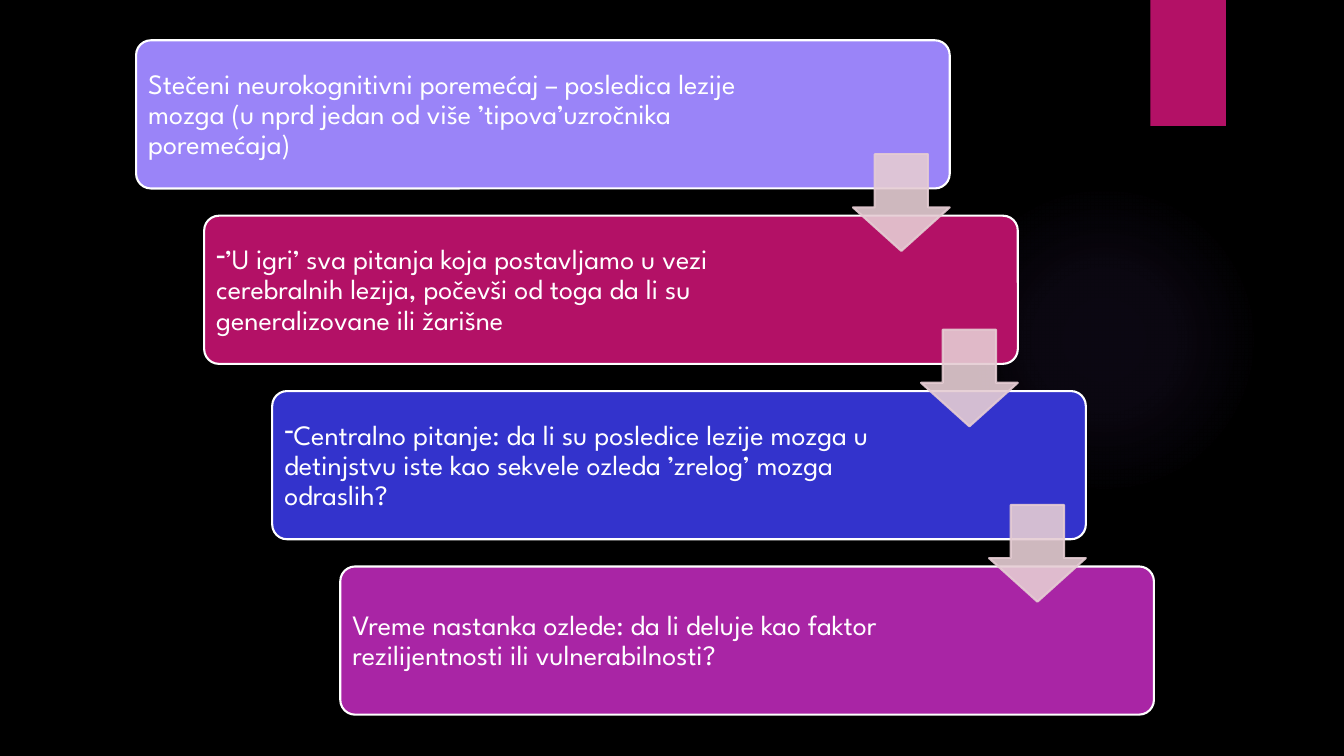
import pptx
import pptx.dml.color
import pptx.enum.shapes
import pptx.enum.text
import pptx.oxml
import pptx.oxml.ns
import pptx.util
from pptx.util import Inches

SHAPES = pptx.enum.shapes.MSO_SHAPE
COLORS = {
    "black": "000000", "white": "FFFFFF", "glow": "9B6BF2", "lilac": "9A84F8",
    "magenta": "B31166", "blue": "3333CC", "purple": "A925A5", "arrow": "E5CCD3",
}
TEXT_FORMAT = {"name": "League Spartan", "size": pptx.util.Pt(20)}
FRAME_FORMAT = {
    "word_wrap": True,
    "vertical_anchor": pptx.enum.text.MSO_ANCHOR.MIDDLE,
    **{f"margin_{side}": Inches(0.08) for side in ("left", "right", "top", "bottom")},
}
# Card colour, whether the text has a dash bullet, and the text
STEPS = [
    ("lilac", False, "Stečeni neurokognitivni poremećaj – posledica lezije mozga "
     "(u nprd jedan od više ’tipova’uzročnika poremećaja)"),
    ("magenta", True, "’U igri’ sva pitanja koja postavljamo u vezi cerebralnih lezija, "
     "počevši od toga da li su generalizovane ili žarišne"),
    ("blue", True, "Centralno pitanje: da li su posledice lezije mozga u detinjstvu "
     "iste kao sekvele ozleda ’zrelog’ mozga odraslih?"),
    ("purple", False, "Vreme nastanka ozlede: da li deluje kao faktor "
     "rezilijentnosti ili vulnerabilnosti?"),
]
CARD_WIDTH, CARD_HEIGHT = 8.07, 1.47
STEP_RIGHT, STEP_DOWN = 0.675, 1.74
ARROW_SIZE = 0.96


def rgb(name):
    return pptx.dml.color.RGBColor.from_string(COLORS[name])


def apply_format(target, values):
    for key, value in values.items():
        setattr(target, key, value)


def add_flat_shape(page, kind, box, fill, line=None, adjustments=()):
    shape = page.shapes.add_shape(kind, *map(Inches, box))
    shape.shadow.inherit = False
    shape.fill.solid()
    shape.fill.fore_color.rgb = rgb(fill)
    if line:
        shape.line.color.rgb = rgb(line)
        shape.line.width = pptx.util.Pt(1.5)
    else:
        shape.line.fill.background()
    for index, value in enumerate(adjustments):
        shape.adjustments[index] = value
    return shape


def add_glow(page, box):
    """Draw a faint ellipse that fades out from its centre."""
    shape = add_flat_shape(page, SHAPES.OVAL, box, "glow")
    stops = "".join(
        f'<a:gs pos="{place * 1000}"><a:srgbClr val="{COLORS["glow"]}">'
        f'<a:alpha val="{alpha * 1000}"/></a:srgbClr></a:gs>'
        for place, alpha in ((0, 7), (36, 6), (69, 0), (100, 0)))
    gradient = pptx.oxml.parse_xml(
        f'<a:gradFill {pptx.oxml.ns.nsdecls("a")}><a:gsLst>{stops}</a:gsLst>'
        '<a:path path="circle"><a:fillToRect l="50000" t="50000" r="50000" b="50000"/>'
        '</a:path></a:gradFill>')
    properties = shape.element.spPr
    properties.replace(properties.find(pptx.oxml.ns.qn("a:solidFill")), gradient)


def add_card(page, left, top, fill, dashed, text):
    add_flat_shape(page, SHAPES.ROUNDED_RECTANGLE,
                   (left, top, CARD_WIDTH, CARD_HEIGHT), fill, "white", [0.1])
    label = page.shapes.add_textbox(
        *map(Inches, (left + 0.04, top + 0.05, 6.36, CARD_HEIGHT - 0.08)))
    apply_format(label.text_frame, FRAME_FORMAT)
    para = label.text_frame.paragraphs[0]
    span = para.add_run()
    span.text = text
    if dashed:
        bullet = pptx.oxml.parse_xml(
            f'<a:buChar {pptx.oxml.ns.nsdecls("a")} char="-"/>')
        para._p.get_or_add_pPr().append(bullet)
    apply_format(para, {"line_spacing": 0.9, "space_after": pptx.util.Pt(7)})
    apply_format(span.font, TEXT_FORMAT)
    span.font.color.rgb = rgb("white")


def add_arrow(page, left, top):
    """Draw a slightly see-through arrow between two cards."""
    arrow = add_flat_shape(page, SHAPES.DOWN_ARROW, (left, top, ARROW_SIZE, ARROW_SIZE),
                           "arrow", "arrow", [0.55, 0.45])
    for color in arrow.element.spPr.iter(pptx.oxml.ns.qn("a:srgbClr")):
        color.append(pptx.oxml.parse_xml(
            f'<a:alpha {pptx.oxml.ns.nsdecls("a")} val="90000"/>'))


def add_staircase(page, left, top):
    """Place the cards as descending steps, with the arrows in front."""
    corners = [(left + index * STEP_RIGHT, top + index * STEP_DOWN)
               for index in range(len(STEPS))]
    for corner, step in zip(corners, STEPS):
        add_card(page, *corner, *step)
    for card_left, card_top in corners[:-1]:
        add_arrow(page, card_left + CARD_WIDTH - ARROW_SIZE, card_top + 1.13)


def main():
    deck = pptx.Presentation()
    deck.slide_width, deck.slide_height = Inches(13.33), Inches(7.5)
    page = deck.slides.add_slide(deck.slide_layouts[6])
    page.background.fill.solid()
    page.background.fill.fore_color.rgb = rgb("black")
    add_glow(page, (9.41, 1.83, 3.08, 3.08))
    add_flat_shape(page, SHAPES.RECTANGLE, (11.41, 0, 0.75, 1.25), "magenta")
    add_staircase(page, 1.35, 0.4)
    deck.save("out.pptx")


if __name__ == "__main__":
    main()
